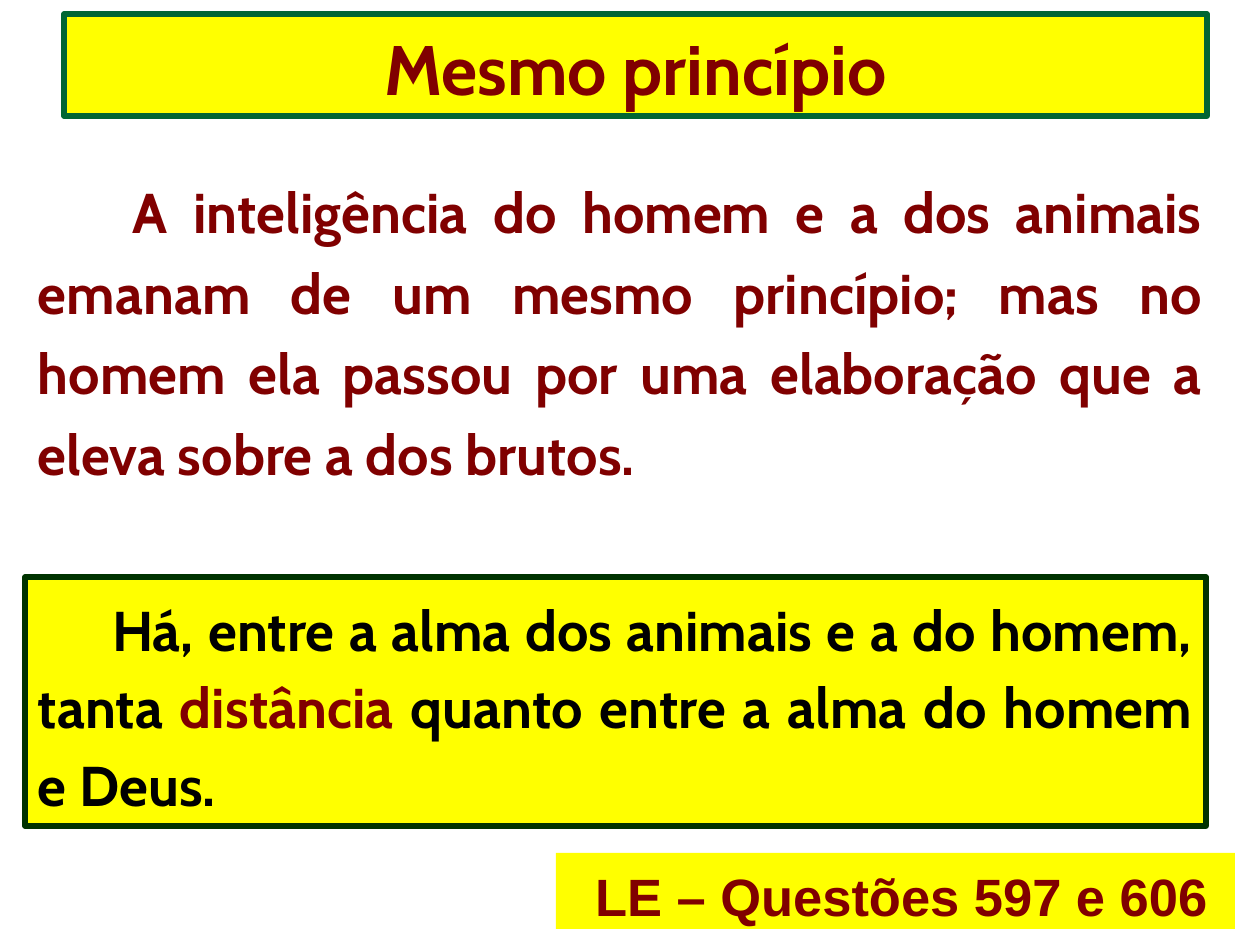
from pptx import Presentation
from pptx.dml.color import RGBColor
from pptx.enum.shapes import MSO_SHAPE
from pptx.enum.text import MSO_ANCHOR, MSO_AUTO_SIZE, PP_ALIGN
from pptx.oxml.ns import qn
from pptx.util import Emu, Pt

YELLOW = RGBColor(0xFF, 0xFF, 0x00)
MAROON = RGBColor(0x80, 0x00, 0x00)
BLACK = RGBColor(0x00, 0x00, 0x00)
GREEN = RGBColor(0x00, 0x66, 0x33)
DARK_GREEN = RGBColor(0x00, 0x33, 0x00)
PX_PER_INCH = 126


def px(length):
    return Emu(round(length * 914400 / PX_PER_INCH))


def set_all(target, values):
    for name, value in values.items():
        setattr(target, name, value)


deck = Presentation()
set_all(deck, {"slide_width": px(1260), "slide_height": px(945)})
page = deck.slides.add_slide(deck.slide_layouts[1])

# Title and body come from the layout, the two panels are rectangles
title, body = page.shapes.title, page.placeholders[1]
quote, reference = [
    page.shapes.add_shape(MSO_SHAPE.RECTANGLE, 0, 0, px(100), px(100)) for _ in range(2)
]

# box, (left, top, width, height), fill, border, anchor, alignment,
# line spacing, first-line indent, (top, right) inset, font, size, spans
blocks = [
    (title, (64, 14, 1143, 102), YELLOW, GREEN, MSO_ANCHOR.BOTTOM, PP_ALIGN.CENTER,
     1.0, 0, (6, 13), "Cabin", 40, [("Mesmo princípio", MAROON)]),
    (body, (25, 158, 1191, 416), None, None, MSO_ANCHOR.TOP, PP_ALIGN.JUSTIFY,
     1.2, 95, (6, 13), "Cabin", 32,
     [("A inteligência do homem e a dos animais emanam de um mesmo princípio; "
       "mas no homem ela passou por uma elaboração que a eleva sobre a dos brutos.",
       MAROON)]),
    (quote, (25, 577, 1181, 249), YELLOW, DARK_GREEN, MSO_ANCHOR.MIDDLE, PP_ALIGN.JUSTIFY,
     1.15, 74, (6, 13), "Cabin", 32,
     [("Há, entre a alma dos animais e a do homem, tanta ", BLACK),
      ("distância", MAROON),
      (" quanto entre a alma do homem e Deus.", BLACK)]),
    (reference, (556, 853, 679, 76), YELLOW, None, MSO_ANCHOR.TOP, PP_ALIGN.RIGHT,
     1.0, 0, (11, 27), "Arial", 30, [("LE – Questões 597 e 606", MAROON)]),
]

for (box, place, fill, border, anchor, alignment, spacing, indent,
     (inset_top, inset_right), font, size, spans) in blocks:
    # Place, fill and border
    set_all(box, dict(zip(("left", "top", "width", "height"), map(px, place))))
    box.shadow.inherit = False
    if fill is None:
        box.fill.background()
    else:
        box.fill.solid()
        box.fill.fore_color.rgb = fill
    if border is None:
        box.line.fill.background()
    else:
        box.line.color.rgb = border
        box.line.width = Pt(3)

    # Text frame and its single paragraph
    set_all(box.text_frame, {
        "word_wrap": True, "auto_size": MSO_AUTO_SIZE.NONE, "vertical_anchor": anchor,
        "margin_left": px(13), "margin_right": px(inset_right),
        "margin_top": px(inset_top), "margin_bottom": px(6),
    })
    para = box.text_frame.paragraphs[0]
    set_all(para, {"alignment": alignment, "line_spacing": spacing,
                   "space_before": Pt(0), "space_after": Pt(0)})

    # First-line indent without a bullet
    properties = para._p.get_or_add_pPr()
    properties.set("marL", "0")
    properties.set("indent", str(px(indent)))
    properties.append(properties.makeelement(qn("a:buNone"), {}))

    for text, colour in spans:
        span = para.add_run()
        span.text = text
        set_all(span.font, {"name": font, "size": Pt(size), "bold": True})
        span.font.color.rgb = colour

deck.save("out.pptx")
